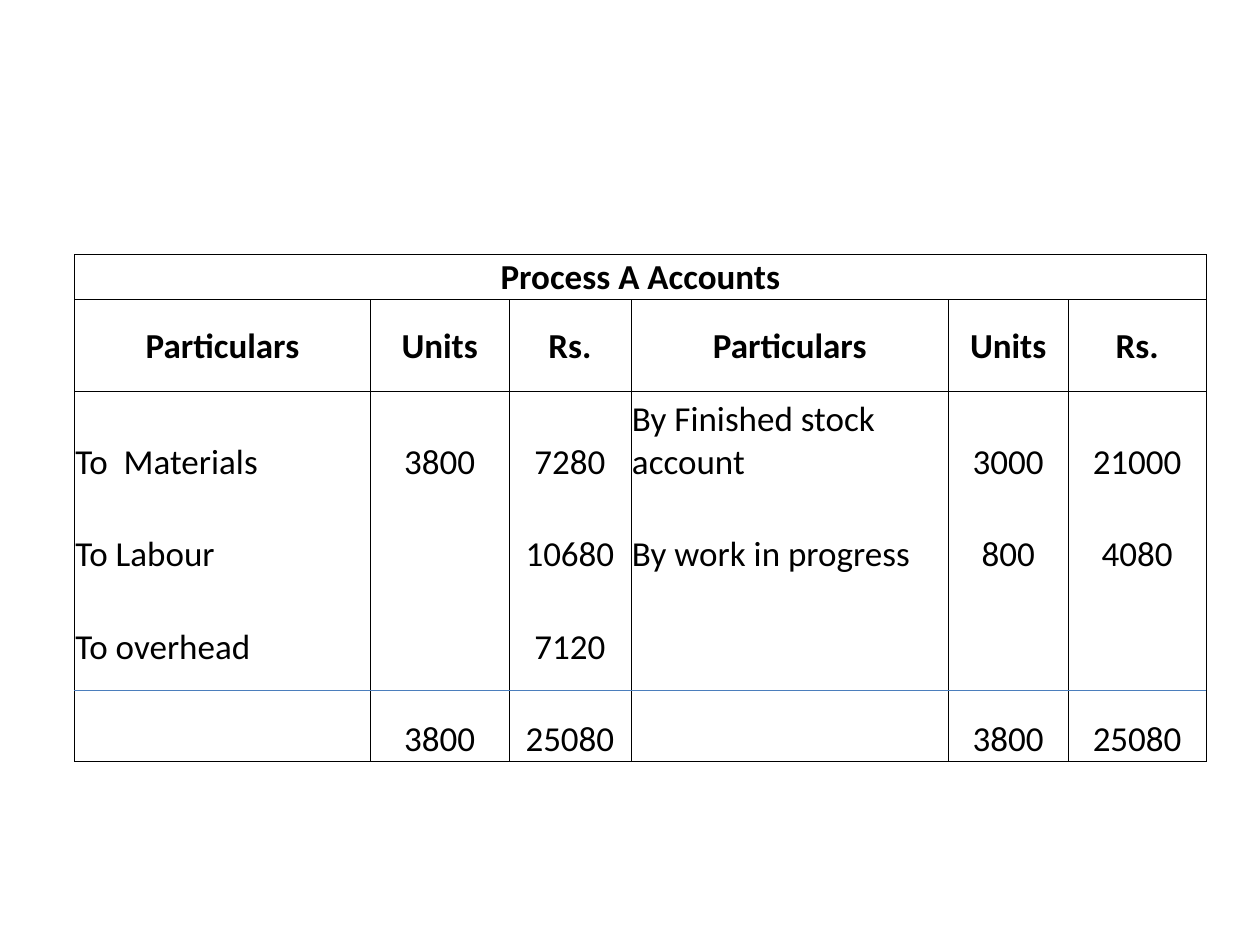
from lxml.etree import SubElement
from pptx import Presentation
from pptx.dml.color import RGBColor
from pptx.enum.shapes import MSO_CONNECTOR
from pptx.enum.text import MSO_ANCHOR, PP_ALIGN
from pptx.oxml import parse_xml
from pptx.oxml.ns import nsdecls, qn
from pptx.util import Cm, Pt

COLORS = {"ink": "000000", "paper": "FFFFFF", "rule": "4B7EBC"}
FONT = "Calibri"
COLUMN_WIDTHS = [5.97, 2.79, 2.46, 6.4, 2.41, 2.79]
TITLE_HEIGHT, ROW_HEIGHT = 0.91, 1.86
PARTICULARS_COLUMNS = (0, 3)
ACCOUNT = [
    ["Process A Accounts", "", "", "", "", ""],
    ["Particulars", "Units", "Rs.", "Particulars", "Units", "Rs."],
    ["To  Materials", "3800", "7280", "By Finished stock account", "3000", "21000"],
    ["To Labour", "", "10680", "By work in progress", "800", "4080"],
    ["To overhead", "", "7120", "", "", ""],
    ["", "3800", "25080", "", "3800", "25080"],
]
HEADING_ROWS = 2


def set_borders(cell, visible_sides):
    """Draw the named sides (L, R, T, B) and hide the others."""
    properties = cell._tc.get_or_add_tcPr()
    for position, side in enumerate("LRTB"):
        border = parse_xml(f'<a:ln{side} {nsdecls("a")} w="{Pt(0.5)}"/>')
        if side in visible_sides:
            fill = SubElement(border, qn("a:solidFill"))
            SubElement(fill, qn("a:srgbClr")).set("val", COLORS["ink"])
        else:
            SubElement(border, qn("a:noFill"))
        properties.insert(position, border)


def write_cell(cell, text, heading, centred):
    cell.margin_left = cell.margin_right = cell.margin_top = Cm(0.02)
    cell.margin_bottom = 0
    cell.vertical_anchor = MSO_ANCHOR.MIDDLE if heading else MSO_ANCHOR.BOTTOM
    paragraph = cell.text_frame.paragraphs[0]
    paragraph.alignment = PP_ALIGN.CENTER if centred else PP_ALIGN.LEFT
    paragraph.font.size = Pt(20)
    if text:
        run = paragraph.add_run()
        run.text = text
        run.font.name = FONT
        run.font.size = Pt(20)
        run.font.bold = heading
        run.font.color.rgb = RGBColor.from_string(COLORS["ink"])


def add_account(slide, left, top):
    """Place the two-sided process account and return its width."""
    width = sum(COLUMN_WIDTHS)
    last_row = len(ACCOUNT) - 1
    height = TITLE_HEIGHT + last_row * ROW_HEIGHT
    account = slide.shapes.add_table(
        len(ACCOUNT), len(COLUMN_WIDTHS), Cm(left), Cm(top), Cm(width), Cm(height)
    ).table
    account.first_row = account.horz_banding = False
    for column, column_width in zip(account.columns, COLUMN_WIDTHS):
        column.width = Cm(column_width)
    for r, entries in enumerate(ACCOUNT):
        account.rows[r].height = Cm(ROW_HEIGHT if r else TITLE_HEIGHT)
        heading = r < HEADING_ROWS
        sides = "LR" + ("T" if r <= HEADING_ROWS else "")
        sides += "B" if heading or r == last_row else ""
        for c, entry in enumerate(entries):
            cell = account.cell(r, c)
            cell.fill.solid()
            cell.fill.fore_color.rgb = RGBColor.from_string(COLORS["paper"])
            write_cell(cell, entry, heading, heading or c not in PARTICULARS_COLUMNS)
            set_borders(cell, sides)
    account.cell(0, 0).merge(account.cell(0, len(COLUMN_WIDTHS) - 1))
    return width


def add_totals_rule(slide, left, top, width):
    rule = slide.shapes.add_connector(
        MSO_CONNECTOR.STRAIGHT, Cm(left), Cm(top), Cm(left + width), Cm(top)
    )
    rule.line.color.rgb = RGBColor.from_string(COLORS["rule"])
    rule.line.width = Pt(0.75)
    SubElement(rule._element.spPr, qn("a:effectLst"))


def main():
    presentation = Presentation()
    presentation.slide_width, presentation.slide_height = Cm(25.4), Cm(19.05)
    slide = presentation.slides.add_slide(presentation.slide_layouts[6])
    left, top = 1.5, 5.13
    width = add_account(slide, left, top)
    add_totals_rule(slide, left, top + 8.79, width)
    presentation.save("out.pptx")


if __name__ == "__main__":
    main()
